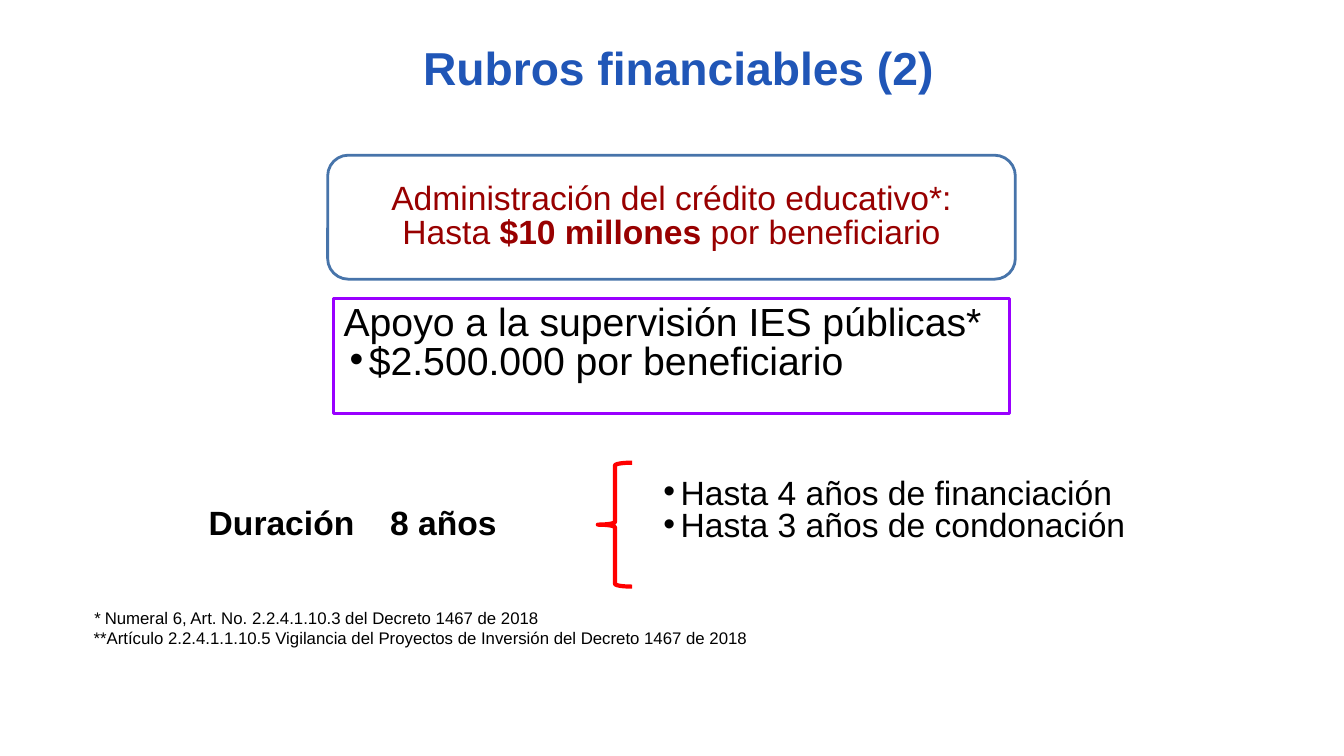
from pptx import Presentation
from pptx import util as u
from pptx.dml.color import RGBColor
from pptx.enum import shapes, text
from pptx.oxml.ns import qn
from lxml import etree

WIDE, HIGH = 13.33, 7.5
HUES = {
    "title": "2056B7", "ink": "000000", "wine": "980000", "white": "FFFFFF",
    "blue": "4774AA", "violet": "9900FF", "red": "FF0000",
}
KIND = shapes.MSO_SHAPE
MID = text.MSO_ANCHOR.MIDDLE
TOP = text.MSO_ANCHOR.TOP
LEFT = text.PP_ALIGN.LEFT
CENTER = text.PP_ALIGN.CENTER


def hue(name):
    return RGBColor.from_string(HUES[name])


def area(x, y, w, h):
    """Turn shares of the slide's size into lengths."""
    return [u.Inches(round(part * full, 2))
            for part, full in ((x, WIDE), (y, HIGH), (w, WIDE), (h, HIGH))]


def place(shape, box):
    shape.left, shape.top, shape.width, shape.height = area(*box)
    return shape


def frame(shape, anchor=TOP, pad=0.1, left=0.1):
    """Set up the text frame of a shape."""
    tf = shape.text_frame
    tf.word_wrap = True
    tf.auto_size = text.MSO_AUTO_SIZE.NONE
    tf.vertical_anchor = anchor
    tf.margin_left, tf.margin_right = u.Inches(left), u.Inches(0.1)
    tf.margin_top = tf.margin_bottom = u.Inches(pad)
    return tf


def mark(para, hang):
    """Give a paragraph a round bullet with a hanging indent."""
    para.level = 1
    props = para._p.get_or_add_pPr()
    props.set("marL", str(u.Inches(0.25)))
    props.set("indent", str(-u.Inches(hang)))
    tint = etree.SubElement(props, qn("a:buClr"))
    etree.SubElement(tint, qn("a:srgbClr")).set("val", HUES["ink"])
    etree.SubElement(props, qn("a:buFont")).set("typeface", "Arial")
    etree.SubElement(props, qn("a:buChar")).set("char", "•")


def write(tf, first, runs, size, color="ink", align=LEFT, gap=1.0,
          before=0, hang=None):
    """Write one paragraph; runs are (words, style) with style b, i or none."""
    para = tf.paragraphs[0] if first else tf.add_paragraph()
    if hang:
        mark(para, hang)
    para.alignment = align
    para.line_spacing = gap
    para.space_before = u.Pt(0 if first else before)
    para.space_after = u.Pt(0)
    for words, style in runs:
        run = para.add_run()
        run.text = words
        font = run.font
        font.name, font.size = "Arial", u.Pt(size)
        font.bold, font.italic = style == "b", style == "i"
        font.color.rgb = hue(color)
    return para


def outline(slide, kind, box, line, width, fill=None):
    """Add a preset shape with a coloured outline."""
    shape = slide.shapes.add_shape(kind, *area(*box))
    shape.shadow.inherit = False
    if fill:
        shape.fill.solid()
        shape.fill.fore_color.rgb = hue(fill)
    else:
        shape.fill.background()
    shape.line.color.rgb = hue(line)
    shape.line.width = u.Pt(width)
    return shape


def label(slide, box):
    return slide.shapes.add_textbox(*area(*box))


def main():
    deck = Presentation()
    deck.slide_width, deck.slide_height = u.Inches(WIDE), u.Inches(HIGH)
    slide = deck.slides.add_slide(deck.slide_layouts[1])

    # Title
    head = place(slide.shapes.title, (0.2, 0.033, 0.609, 0.109))
    write(frame(head, MID, 0.05), True, [("Rubros financiables (2)", "b")],
          33, "title", CENTER)

    # Footnotes
    notes = frame(label(slide, (0.062, 0.797, 0.807, 0.083)), pad=0.05)
    write(notes, True, [
        ("* ", "i"),
        ("Numeral 6, Art. No. 2.2.4.1.10.3 del Decreto 1467 de 2018", "")], 12)
    write(notes, False, [
        ("**Artículo 2.2.4.1.1.10.5 Vigilancia del Proyectos de Inversión "
         "del Decreto 1467 de 2018", "")], 12)

    # Credit card
    card = outline(slide, KIND.ROUNDED_RECTANGLE,
                   (0.244, 0.205, 0.512, 0.164), "blue", 2, "white")
    write(frame(card, MID, 0.05), True, [
        ("Administración del crédito educativo*: Hasta ", ""),
        ("$10 millones ", "b"), ("por beneficiario", "")],
        24, "wine", CENTER, 0.85)

    # Support box
    aid = frame(outline(slide, KIND.RECTANGLE,
                        (0.248, 0.395, 0.503, 0.152), "violet", 2.25))
    write(aid, True, [("Apoyo a la supervisión IES públicas*", "")],
          28, gap=0.75)
    write(aid, False, [("$2.500.000 por beneficiario", "")],
          28, gap=0.75, before=2.8, hang=0.19)

    # Duration, with a tab stop before the figure
    span = frame(label(slide, (0.11, 0.663, 0.331, 0.072)), left=0.6)
    tabs = etree.SubElement(span.paragraphs[0]._p.get_or_add_pPr(),
                            qn("a:tabLst"))
    stop = etree.SubElement(tabs, qn("a:tab"))
    stop.set("pos", str(u.Inches(1.8)))
    stop.set("algn", "l")
    write(span, True, [("Duración\t8 años", "b")], 24, gap=0.75)

    # Terms of the credit
    terms = frame(place(slide.placeholders[1], (0.48, 0.623, 0.389, 0.152)))
    for i, term in enumerate(("Hasta 4 años de financiación",
                              "Hasta 3 años de condonación")):
        write(terms, i == 0, [(term, "")], 24, gap=0.75, before=1.8, hang=0.17)

    # Brace
    brace = outline(slide, KIND.LEFT_BRACE,
                    (0.445, 0.612, 0.0255, 0.164), "red", 3)
    brace.adjustments[0] = 0.08

    deck.save("out.pptx")


if __name__ == "__main__":
    main()
